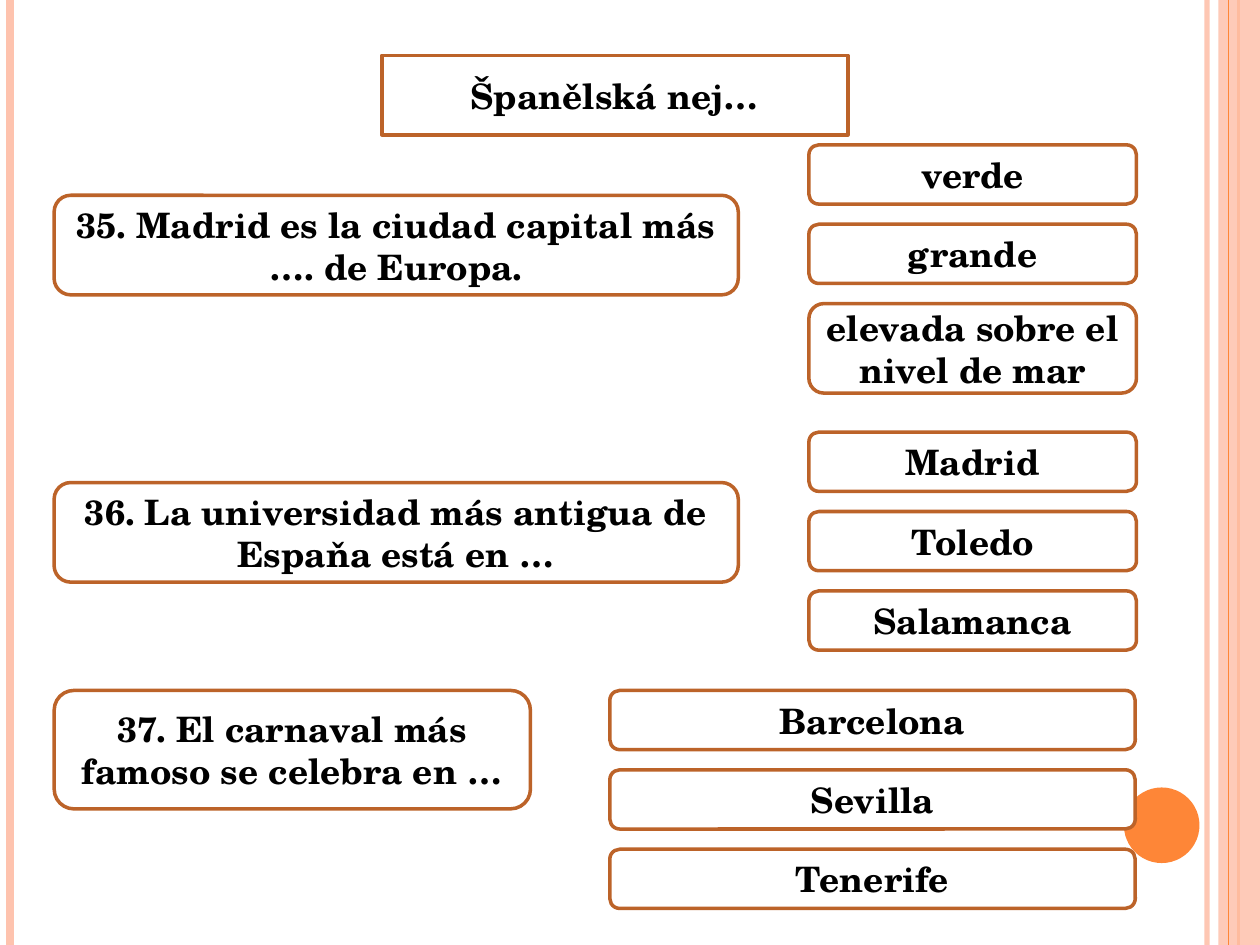
from lxml import etree
from pptx import Presentation
from pptx.dml.color import RGBColor
from pptx.enum.shapes import MSO_CONNECTOR, MSO_SHAPE
from pptx.enum.text import MSO_ANCHOR, MSO_AUTO_SIZE, PP_ALIGN
from pptx.oxml.ns import qn
from pptx.util import Inches, Pt

ROUNDED = MSO_SHAPE.ROUNDED_RECTANGLE
RECTANGLE = MSO_SHAPE.RECTANGLE
OVAL = MSO_SHAPE.OVAL
STRAIGHT = MSO_CONNECTOR.STRAIGHT
CENTER = PP_ALIGN.CENTER
MIDDLE = MSO_ANCHOR.MIDDLE
NO_AUTOFIT = MSO_AUTO_SIZE.NONE

WHITE = RGBColor(0xFF, 0xFF, 0xFF)
BLACK = RGBColor(0x00, 0x00, 0x00)
BROWN = RGBColor(0xBC, 0x63, 0x29)
ORANGE = RGBColor(0xFE, 0x86, 0x37)
PEACH = RGBColor(0xFE, 0xC3, 0xAE)

SLIDE_WIDTH, SLIDE_HEIGHT = 10, 7.5
ANSWER_HEIGHT, ANSWER_STEP = 0.47, 0.63

STRIPES = [(9.58, PEACH, 3, 93), (0.08, PEACH, 4.5, 100), (9.83, ORANGE, 1.5, 100)]

QUESTIONS = [
    {
        "text": "35. Madrid es la ciudad capital más …. de Europa.",
        "box": (0.43, 1.55, 5.43, 0.79),
        "answers_at": (6.42, 1.15, 2.6),
        "answers": ["verde", "grande", "elevada sobre el nivel de mar"],
        "last_height": 0.71,
    },
    {
        "text": "36. La universidad más antigua de Espaňa está en …",
        "box": (0.43, 3.83, 5.43, 0.79),
        "answers_at": (6.42, 3.43, 2.6),
        "answers": ["Madrid", "Toledo", "Salamanca"],
        "last_height": ANSWER_HEIGHT,
    },
    {
        "text": "37. El carnaval más famoso se celebra en …",
        "box": (0.43, 5.48, 3.78, 0.94),
        "answers_at": (4.84, 5.48, 4.17),
        "answers": ["Barcelona", "Sevilla", "Tenerife"],
        "last_height": ANSWER_HEIGHT,
    },
]


class QuizSlide:
    font_format = {"name": "TeX Gyre Schola", "size": Pt(20), "bold": True}
    frame_format = {
        "word_wrap": True,
        "auto_size": NO_AUTOFIT,
        "vertical_anchor": MIDDLE,
    }

    def __init__(self, slide):
        self.slide = slide

    def set_alpha(self, properties, percent):
        color = next(properties.iter(qn("a:srgbClr")))
        etree.SubElement(color, qn("a:alpha"), val=str(percent * 1000))

    def stripe(self, x, color, width, opacity=100):
        stripe = self.slide.shapes.add_connector(
            STRAIGHT, Inches(x), Inches(0), Inches(x), Inches(SLIDE_HEIGHT)
        )
        stripe.line.color.rgb = color
        stripe.line.width = Pt(width)
        properties = stripe.element.spPr
        if opacity < 100:
            self.set_alpha(properties, opacity)
        etree.SubElement(properties, qn("a:effectLst"))

    def decoration(self, kind, box, color, opacity=100):
        decoration = self.slide.shapes.add_shape(kind, *map(Inches, box))
        decoration.shadow.inherit = False
        decoration.fill.solid()
        decoration.fill.fore_color.rgb = color
        decoration.line.fill.background()
        if opacity < 100:
            self.set_alpha(decoration.element.spPr, opacity)

    def style_card(self, card, text):
        card.fill.solid()
        card.fill.fore_color.rgb = WHITE
        card.line.color.rgb = BROWN
        card.line.width = Pt(2)
        frame = card.text_frame
        frame.text = text
        for name, value in self.frame_format.items():
            setattr(frame, name, value)
        paragraph = frame.paragraphs[0]
        paragraph.alignment = CENTER
        font = paragraph.runs[0].font
        for name, value in self.font_format.items():
            setattr(font, name, value)
        font.color.rgb = BLACK

    def title(self, text, box):
        title = self.slide.shapes.title
        title.left, title.top, title.width, title.height = map(Inches, box)
        outline = etree.SubElement(
            title.element.spPr, qn("a:prstGeom"), prst="roundRect"
        )
        etree.SubElement(outline, qn("a:avLst"))
        self.style_card(title, text)

    def card(self, text, box):
        card = self.slide.shapes.add_shape(ROUNDED, *map(Inches, box))
        card.shadow.inherit = False
        self.style_card(card, text)

    def question(self, text, box, answers_at, answers, last_height):
        self.card(text, box)
        left, top, width = answers_at
        heights = [ANSWER_HEIGHT] * (len(answers) - 1) + [last_height]
        for row, (answer, height) in enumerate(zip(answers, heights)):
            self.card(answer, (left, top + row * ANSWER_STEP, width, height))


def main():
    presentation = Presentation()
    presentation.slide_width = Inches(SLIDE_WIDTH)
    presentation.slide_height = Inches(SLIDE_HEIGHT)
    title_only = presentation.slide_layouts[5]
    quiz = QuizSlide(presentation.slides.add_slide(title_only))

    for stripe in STRIPES:
        quiz.stripe(*stripe)
    quiz.decoration(RECTANGLE, (9.67, 0, 0.33, SLIDE_HEIGHT), PEACH, 87)
    quiz.stripe(9.75, ORANGE, 0.75)
    quiz.decoration(OVAL, (8.92, 6.25, 0.6, 0.6), ORANGE)

    quiz.title("Španělská nej…", (3.03, 0.44, 3.7, 0.63))
    for question in QUESTIONS:
        quiz.question(**question)

    presentation.save("out.pptx")


if __name__ == "__main__":
    main()
